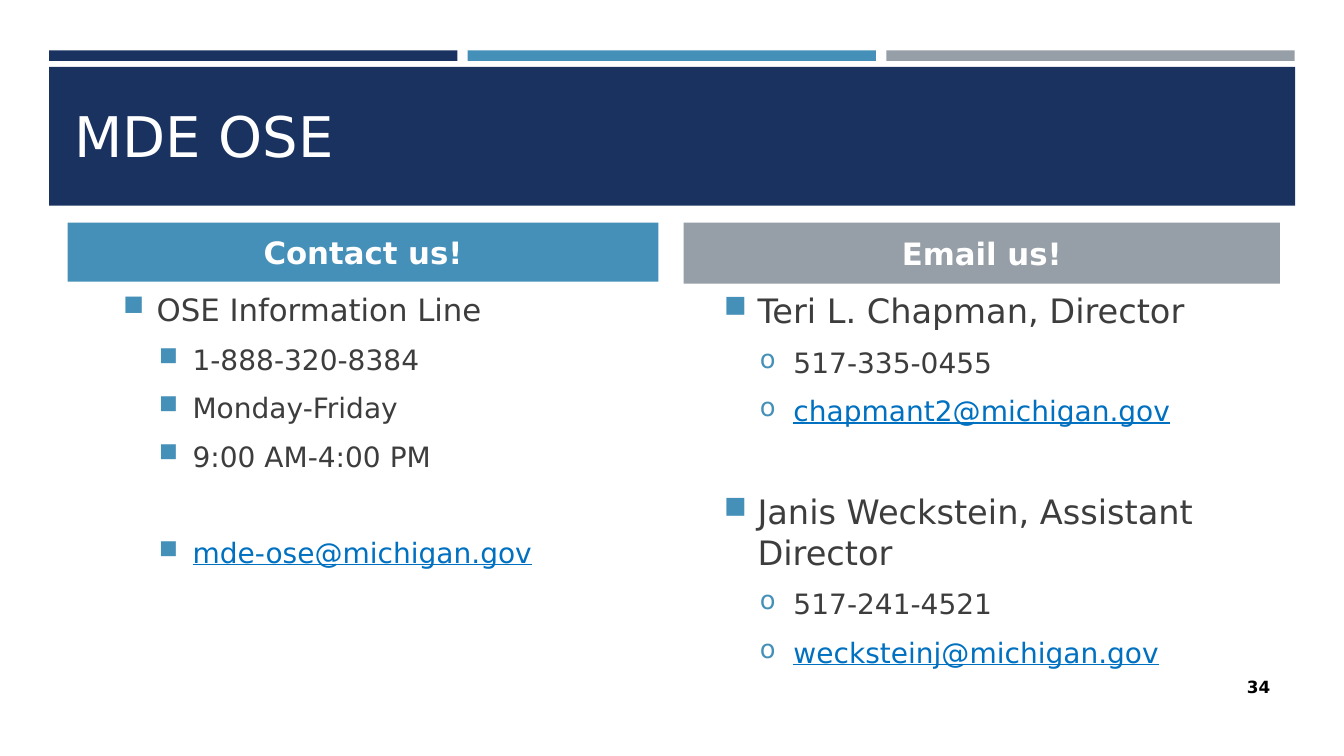
import lxml.etree
import pptx
import pptx.dml.color
import pptx.enum.shapes
import pptx.enum.text
import pptx.oxml.ns
import pptx.util

Pt = pptx.util.Pt
ALIGN = pptx.enum.text.PP_ALIGN
ANCHOR = pptx.enum.text.MSO_ANCHOR

FONT = "DejaVu Sans"
NAVY, BLUE, GRAY = "1A3260", "4590B8", "969FA7"
WHITE, BLACK, INK, LINK = "FFFFFF", "000000", "3D3D3D", "0070C0"
BLANK_LINE = 34  # height of the gap between two groups of lines


def color(value):
    return pptx.dml.color.RGBColor.from_string(value)


def add_bar(slide, left, top, width, height, fill):
    sp = slide.shapes.add_shape(
        pptx.enum.shapes.MSO_SHAPE.RECTANGLE,
        Pt(left), Pt(top), Pt(width), Pt(height))
    sp.shadow.inherit = False
    sp.fill.solid()
    sp.fill.fore_color.rgb = color(fill)
    sp.line.fill.background()
    return sp


def add_box(slide, left, top, width, height):
    return slide.shapes.add_textbox(Pt(left), Pt(top), Pt(width), Pt(height))


def add_run(p, text, size, ink, bold=False, underline=False):
    r = p.add_run()
    r.text = text
    r.font.name = FONT
    r.font.size = Pt(size)
    r.font.color.rgb = color(ink)
    r.font.bold = bold
    r.font.underline = underline


def set_line(sp, text, size, ink, align=ALIGN.LEFT, bold=False):
    """Fill a shape with one vertically centred line."""
    tf = sp.text_frame
    tf.word_wrap = True
    tf.vertical_anchor = ANCHOR.MIDDLE
    p = tf.paragraphs[0]
    p.alignment = align
    add_run(p, text, size, ink, bold)


def set_bullet(p, char, indent):
    pPr = p._p.get_or_add_pPr()
    pPr.set("marL", str(Pt(indent)))
    pPr.set("indent", str(-Pt(24)))
    qn = pptx.oxml.ns.qn
    bu_color = lxml.etree.SubElement(pPr, qn("a:buClr"))
    lxml.etree.SubElement(bu_color, qn("a:srgbClr"), val=BLUE)
    lxml.etree.SubElement(pPr, qn("a:buSzPct"), val="92000")
    lxml.etree.SubElement(pPr, qn("a:buChar"), char=char)


def add_contacts(slide, left, top, width, height, head_size, sub_bullet, lines):
    """Write (level, text, starts a new group) lines as a bulleted list."""
    tf = add_box(slide, left, top, width, height).text_frame
    tf.word_wrap = True
    for i, (level, text, new_group) in enumerate(lines):
        p = tf.add_paragraph() if i else tf.paragraphs[0]
        p.level = level
        size = 20 if level else head_size
        set_bullet(p, sub_bullet if level else "■", 49.7 if level else 24)
        before = 0.23 * size + (BLANK_LINE if new_group else 0)
        p.space_before = Pt(round(before, 1) if i else 0)
        p.space_after = Pt(6)
        is_email = "@" in text
        add_run(p, text, size, LINK if is_email else INK, underline=is_email)


def main():
    prs = pptx.Presentation()
    prs.slide_width, prs.slide_height = Pt(960), Pt(540)
    slide = prs.slides.add_slide(prs.slide_layouts[6])

    for i, fill in enumerate((NAVY, BLUE, GRAY)):
        add_bar(slide, 35.1 + 299 * i, 36, 291.6, 7.5, fill)
    add_bar(slide, 35.1, 47.8, 890, 99.2, NAVY)
    set_line(add_box(slide, 46, 57.6, 868, 77.8), "MDE OSE", 40, WHITE)

    for text, left, width, height, fill in (
            ("Contact us!", 48.3, 422, 42.2, BLUE),
            ("Email us!", 488.3, 426, 43.6, GRAY)):
        sp = add_bar(slide, left, 159, width, height, fill)
        set_line(sp, text, 22, WHITE, ALIGN.CENTER, True)

    add_contacts(slide, 80.8, 203.8, 327.6, 262.8, 22, "■", [
        (0, "OSE Information Line", False),
        (1, "1-888-320-8384", False),
        (1, "Monday-Friday", False),
        (1, "9:00 AM-4:00 PM", False),
        (1, "mde-ose@michigan.gov", True),
    ])
    add_contacts(slide, 510, 203.8, 411.8, 272.2, 24, "o", [
        (0, "Teri L. Chapman, Director", False),
        (1, "517-335-0455", False),
        (1, "chapmant2@michigan.gov", False),
        (0, "Janis Weckstein, Assistant Director", True),
        (1, "517-241-4521", False),
        (1, "wecksteinj@michigan.gov", False),
    ])
    set_line(add_box(slide, 831.6, 476, 82.8, 28.8), "34", 12, BLACK,
             ALIGN.RIGHT, True)
    prs.save("out.pptx")


if __name__ == "__main__":
    main()
